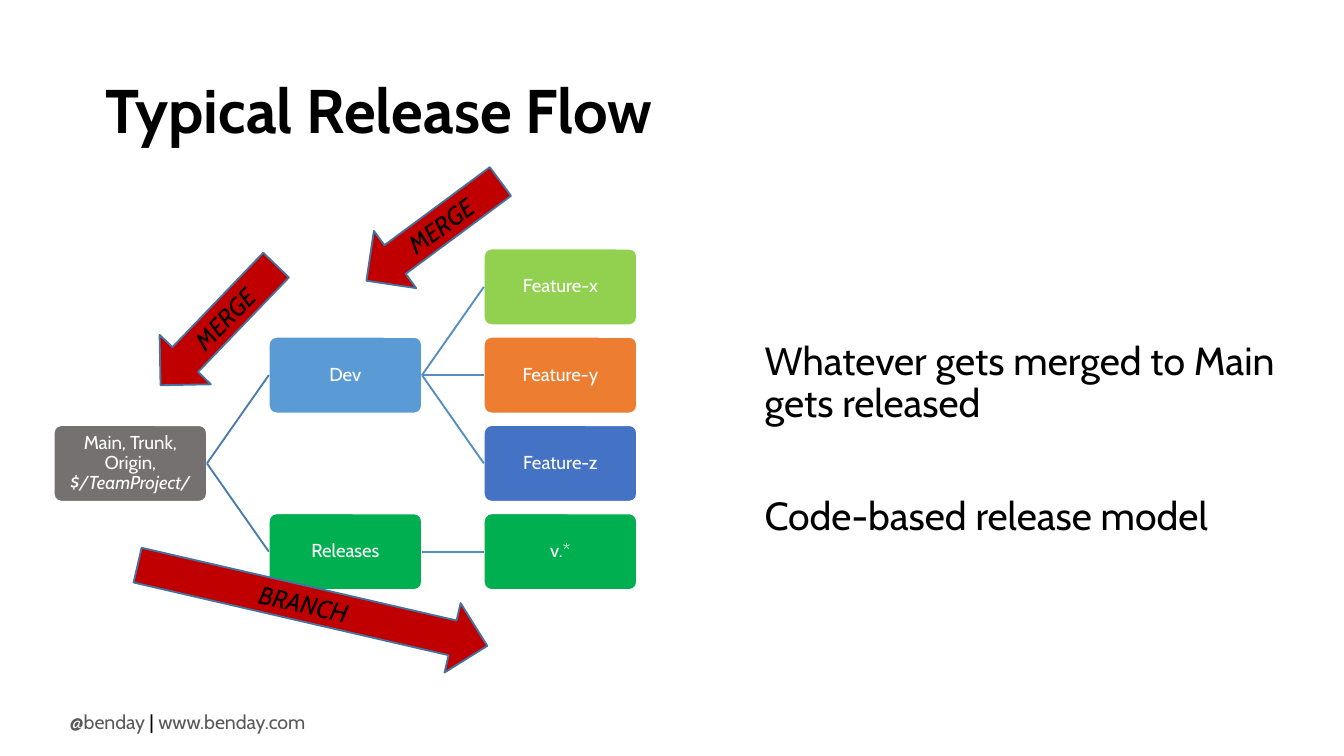
import pptx
import pptx.dml.color
import pptx.enum.shapes
import pptx.enum.text
import pptx.oxml
import pptx.util
from dataclasses import dataclass
from pptx.util import Inches

SHAPE = pptx.enum.shapes.MSO_SHAPE
ANCHOR = pptx.enum.text.MSO_ANCHOR
ALIGN = pptx.enum.text.PP_ALIGN


@dataclass(frozen=True)
class Theme:
    font: str = "Cabin"
    title: float = 33
    body: float = 21
    arrow: float = 13.5
    footer: float = 10.5
    node: float = 10
    black: str = "000000"
    white: str = "FFFFFF"
    muted: str = "595959"
    gray: str = "767171"
    blue: str = "5B9BD5"
    lime: str = "92D050"
    orange: str = "ED7D31"
    indigo: str = "4472C4"
    green: str = "00B050"
    red: str = "C00000"
    arrow_line: str = "43739E"
    trunk_link: str = "497CAB"
    branch_link: str = "538DC1"


def rgb(value):
    return pptx.dml.color.RGBColor.from_string(value)


class SlideBuilder:
    def __init__(self, s, theme):
        self.s, self.theme = s, theme

    def frame(self, sp, margin=None, **formats):
        """Apply text frame settings, with equal margins if given."""
        tf = sp.text_frame
        formats = {"word_wrap": True, **formats}
        if margin is not None:
            for side in ("left", "right", "top", "bottom"):
                formats[f"margin_{side}"] = Inches(margin)
        for name, value in formats.items():
            setattr(tf, name, value)
        return tf

    def paragraph(self, p, runs, size, **formats):
        """Fill a paragraph with (text, colour, font settings) runs."""
        for name, value in formats.items():
            setattr(p, name, value)
        for text, color, extra in runs:
            if text == "\n":
                p.add_line_break()
                continue
            r = p.add_run()
            r.text = text
            font = {"name": self.theme.font, "size": pptx.util.Pt(size), **extra}
            for name, value in font.items():
                setattr(r.font, name, value)
            r.font.color.rgb = rgb(color)

    def text(self, box, paragraphs, size, gap=0, line_spacing=0.9, **frame):
        sp = self.s.shapes.add_textbox(*map(Inches, box))
        tf = self.frame(sp, **frame)
        for i, runs in enumerate(paragraphs):
            p = tf.add_paragraph() if i else tf.paragraphs[0]
            formats = {"line_spacing": line_spacing}
            if i:
                formats["space_before"] = pptx.util.Pt(gap)
            self.paragraph(p, runs, size, **formats)

    def shape(self, kind, box, fill, line):
        sp = self.s.shapes.add_shape(kind, *map(Inches, box))
        sp.shadow.inherit = False
        sp.fill.solid()
        sp.fill.fore_color.rgb = rgb(fill)
        sp.line.color.rgb = rgb(line)
        sp.line.width = pptx.util.Pt(1)
        return sp

    def node(self, box, runs, fill):
        sp = self.shape(SHAPE.ROUNDED_RECTANGLE, box, fill, self.theme.white)
        sp.adjustments[0] = 0.1
        tf = self.frame(sp, margin=0.01, vertical_anchor=ANCHOR.MIDDLE)
        self.paragraph(tf.paragraphs[0], runs, self.theme.node,
                       alignment=ALIGN.CENTER, line_spacing=0.9)
        return sp

    def link(self, parent, child, color):
        c = self.s.shapes.add_connector(
            pptx.enum.shapes.MSO_CONNECTOR.STRAIGHT, 0, 0, 0, 0)
        c.begin_connect(parent, 3)
        c.end_connect(child, 1)
        c.line.color.rgb = rgb(color)
        c.line.width = pptx.util.Pt(1)
        c._element.spPr.append(pptx.oxml.parse_xml(
            '<a:effectLst xmlns:a="http://schemas.openxmlformats.org/drawingml/2006/main"/>'))

    def arrow(self, box, rotation, label, direction):
        t = self.theme
        sp = self.shape(SHAPE.DOWN_ARROW, box, t.red, t.arrow_line)
        sp.rotation = rotation
        tf = self.frame(sp, vertical_anchor=ANCHOR.MIDDLE)
        tf._txBody.bodyPr.set("vert", direction)
        self.paragraph(tf.paragraphs[0], [(label, t.black, {"italic": True})],
                       t.arrow, alignment=ALIGN.CENTER)


def main():
    # Widescreen 16:9 slide
    prs = pptx.Presentation()
    prs.slide_width, prs.slide_height = Inches(10), Inches(10 * 9 / 16)
    t = Theme()
    b = SlideBuilder(prs.slides.add_slide(prs.slide_layouts[6]), t)

    # Footer, title and body text
    b.text((0.42, 5.23, 2.08, 0.28),
           [[("@benday", t.muted, {}), (" | ", t.black, {}),
             ("www.benday.com", t.muted, {})]],
           t.footer, line_spacing=1.0, word_wrap=False)
    b.text((0.69, 0.3, 8.62, 1.09),
           [[("Typical Release Flow", t.black, {"bold": True})]],
           t.title, vertical_anchor=ANCHOR.MIDDLE)
    points = ["Whatever gets merged to Main gets released",
              "Code-based release model"]
    b.text((5.59, 1.21, 4.41, 4.13),
           [[(point, t.black, {})] for point in points],
           t.body, gap=37.5, vertical_anchor=ANCHOR.MIDDLE)

    # Branch tree: name, column, row, fill
    left, top, bottom, col_step = 0.4, 1.85, 3.82, 1.6
    row_step = (bottom - top) / 3
    tree = [("Main", 0, 2, t.gray), ("Dev", 1, 1, t.blue),
            ("Feature-x", 2, 0, t.lime), ("Feature-y", 2, 1, t.orange),
            ("Feature-z", 2, 2, t.indigo), ("Releases", 1, 3, t.green),
            ("v.*", 2, 3, t.green)]
    main_label = [("Main, Trunk, Origin,", t.white, {}), ("\n", t.white, {}),
                  ("$/TeamProject/", t.white, {"italic": True})]
    nodes = {}
    for name, col, row, fill in tree:
        box = (left + col * col_step, top + row * row_step, 1.14, 0.57)
        runs = main_label if name == "Main" else [(name, t.white, {})]
        nodes[name] = b.node(box, runs, fill)

    # Links from each branch to its children
    children = {"Main": ["Dev", "Releases"],
                "Dev": ["Feature-x", "Feature-y", "Feature-z"],
                "Releases": ["v.*"]}
    for parent, names in children.items():
        color = t.trunk_link if parent == "Main" else t.branch_link
        for name in names:
            b.link(nodes[parent], nodes[name], color)

    # Merge and branch arrows
    b.arrow((2.96, 1.1, 0.53, 1.24), 53.5, "MERGE", "vert270")
    b.arrow((1.36, 1.8, 0.53, 1.24), 43.9, "MERGE", "vert270")
    b.arrow((2.06, 3.17, 0.53, 2.67), 283, "BRANCH", "vert")

    prs.save("out.pptx")


if __name__ == "__main__":
    main()
